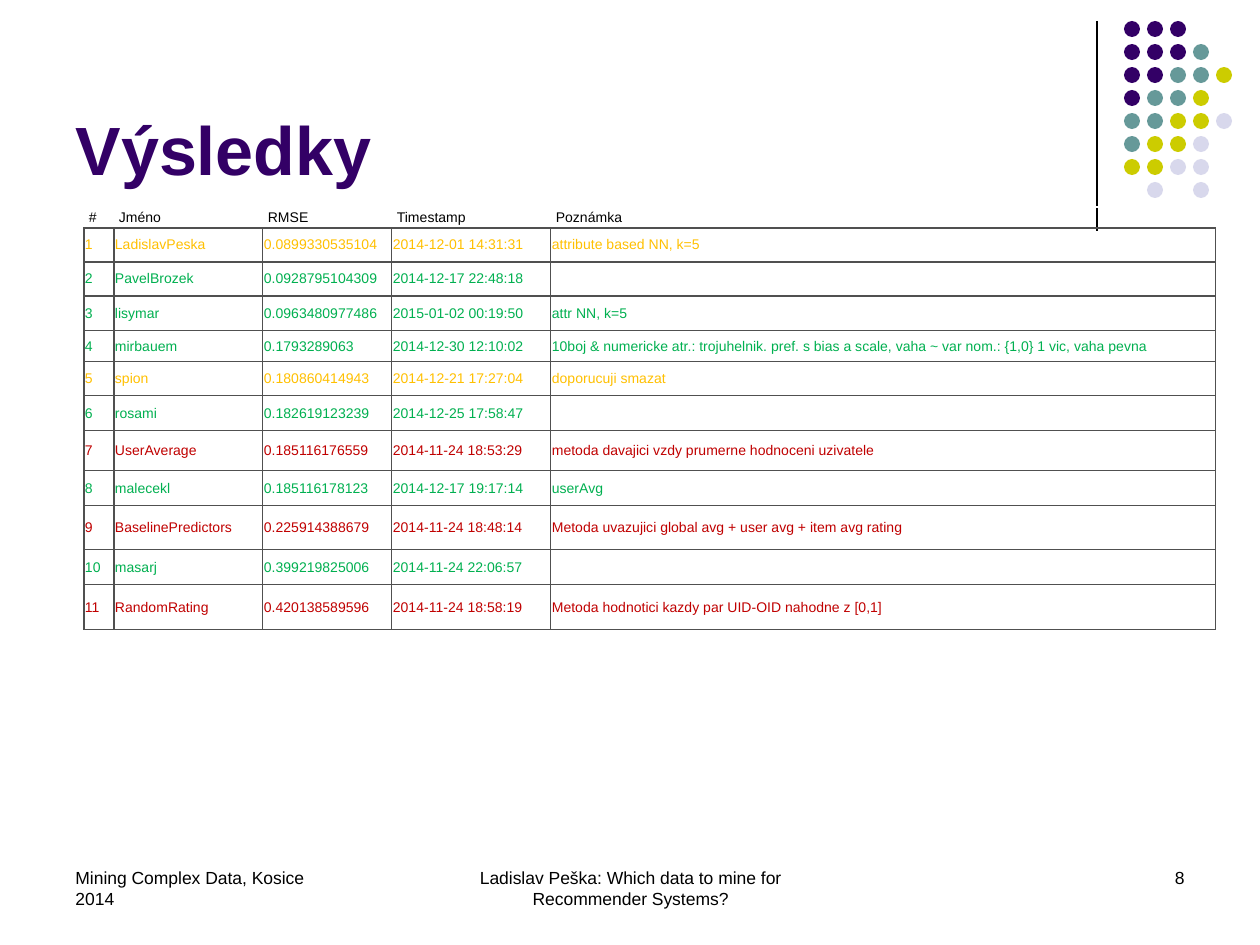
from lxml import etree
from pptx import Presentation
from pptx.dml.color import RGBColor
from pptx.enum.shapes import MSO_CONNECTOR, MSO_SHAPE
from pptx.enum.text import MSO_ANCHOR, PP_ALIGN
from pptx.oxml.ns import qn
from pptx.util import Pt

PX = 914400 / 126
OVAL = MSO_SHAPE.OVAL
STRAIGHT = MSO_CONNECTOR.STRAIGHT
BOTTOM, MIDDLE = MSO_ANCHOR.BOTTOM, MSO_ANCHOR.MIDDLE
LEFT, CENTER, RIGHT = PP_ALIGN.LEFT, PP_ALIGN.CENTER, PP_ALIGN.RIGHT
rgb = RGBColor.from_string


def px(*values):
    return [round(v * PX) for v in values]


def write(tf, text, size, color, align=LEFT, bold=False):
    tf.text = text
    tf.word_wrap = True
    p = tf.paragraphs[0]
    p.alignment = align
    for r in p.runs:
        r.font.name = "Arial"
        r.font.size = Pt(size)
        r.font.bold = bold
        r.font.color.rgb = rgb(color)
    if not p.runs:
        etree.SubElement(p._p, qn("a:endParaRPr"), sz=str(size * 100))


prs = Presentation()
prs.slide_width, prs.slide_height = px(1260, 945)
s = prs.slides.add_slide(prs.slide_layouts[5])

title = s.shapes.title
title.left, title.top, title.width, title.height = px(63, 16, 1040, 179)
write(title.text_frame, "Výsledky", 39, "330066", bold=True)
title.text_frame.vertical_anchor = BOTTOM

line = s.shapes.add_connector(STRAIGHT, *px(1097, 21, 1097, 231))
line.line.color.rgb = rgb("000000")
line.line.width = Pt(0.75)
etree.SubElement(line._element.spPr, qn("a:effectLst"))

dot_colors = {"P": "330066", "T": "669999", "Y": "CCCC00", "L": "D8D8EC"}
dot_rows = ["PPP", "PPPT", "PPTTY", "PTTY", "TTYYL", "TYYL", "YYLL", " L L"]
for row, codes in enumerate(dot_rows):
    for col, code in enumerate(codes):
        if code in dot_colors:
            sp = s.shapes.add_shape(OVAL, *px(1124 + 23 * col, 21 + 23 * row, 16, 16))
            sp.shadow.inherit = False
            sp.fill.solid()
            sp.fill.fore_color.rgb = rgb(dot_colors[code])
            sp.line.fill.background()

footers = [
    (63, 294, LEFT, "Mining Complex Data, Kosice 2014"),
    (431, 399, CENTER, "Ladislav Peška: Which data to mine for Recommender Systems?"),
    (903, 294, RIGHT, "8"),
]
for left, width, align, text in footers:
    sp = s.shapes.add_textbox(*px(left, 861, width, 63))
    write(sp.text_frame, text, 10, "000000", align)

BLACK, AMBER, GREEN, RED = "000000", "FFC000", "00B050", "C00000"
results = [
    (21, BLACK, "#", "Jméno", "RMSE", "Timestamp", "Poznámka"),
    (34, AMBER, "1", "LadislavPeska", "0.0899330535104", "2014-12-01 14:31:31",
     "attribute based NN, k=5"),
    (34, GREEN, "2", "PavelBrozek", "0.0928795104309", "2014-12-17 22:48:18", ""),
    (35, GREEN, "3", "lisymar", "0.0963480977486", "2015-01-02 00:19:50", "attr NN, k=5"),
    (31, GREEN, "4", "mirbauem", "0.1793289063", "2014-12-30 12:10:02",
     "10boj & numericke atr.: trojuhelnik. pref. s bias a scale, "
     "vaha ~ var nom.: {1,0} 1 vic, vaha pevna"),
    (34, AMBER, "5", "spion", "0.180860414943", "2014-12-21 17:27:04", "doporucuji smazat"),
    (35, GREEN, "6", "rosami", "0.182619123239", "2014-12-25 17:58:47", ""),
    (40, RED, "7", "UserAverage", "0.185116176559", "2014-11-24 18:53:29",
     "metoda davajici vzdy prumerne hodnoceni uzivatele"),
    (35, GREEN, "8", "malecekl", "0.185116178123", "2014-12-17 19:17:14", "userAvg"),
    (44, RED, "9", "BaselinePredictors", "0.225914388679", "2014-11-24 18:48:14",
     "Metoda uvazujici global avg + user avg + item avg rating"),
    (35, GREEN, "10", "masarj", "0.399219825006", "2014-11-24 22:06:57", ""),
    (45, RED, "11", "RandomRating", "0.420138589596", "2014-11-24 18:58:19",
     "Metoda hodnotici kazdy par UID-OID nahodne z [0,1]"),
]
col_widths = px(30, 149, 129, 159, 665)
table_height = sum(row[0] for row in results)
table = s.shapes.add_table(len(results), len(col_widths), *px(84, 207, 1132, table_height)).table
table.first_row = table.horz_banding = False
for column, width in zip(table.columns, col_widths):
    column.width = width

for i, (height, color, *values) in enumerate(results):
    table.rows[i].height = px(height)[0]
    for j, value in enumerate(values):
        cell = table.cell(i, j)
        write(cell.text_frame, value, 8, color)
        cell.vertical_anchor = MIDDLE
        cell.margin_left, cell.margin_right = px(1, 1) if i else px(5, 5)
        cell.margin_top, cell.margin_bottom = px(1, 1) if i else px(2, 2)
        tcPr = cell._tc.get_or_add_tcPr()
        for side in ("L", "R", "T", "B") if i else ("B",):
            ln = etree.SubElement(tcPr, qn(f"a:ln{side}"), w=str(Pt(0.75)))
            fill = etree.SubElement(ln, qn("a:solidFill"))
            etree.SubElement(fill, qn("a:srgbClr"), val="505050")
        cell.fill.background()

prs.save("out.pptx")
